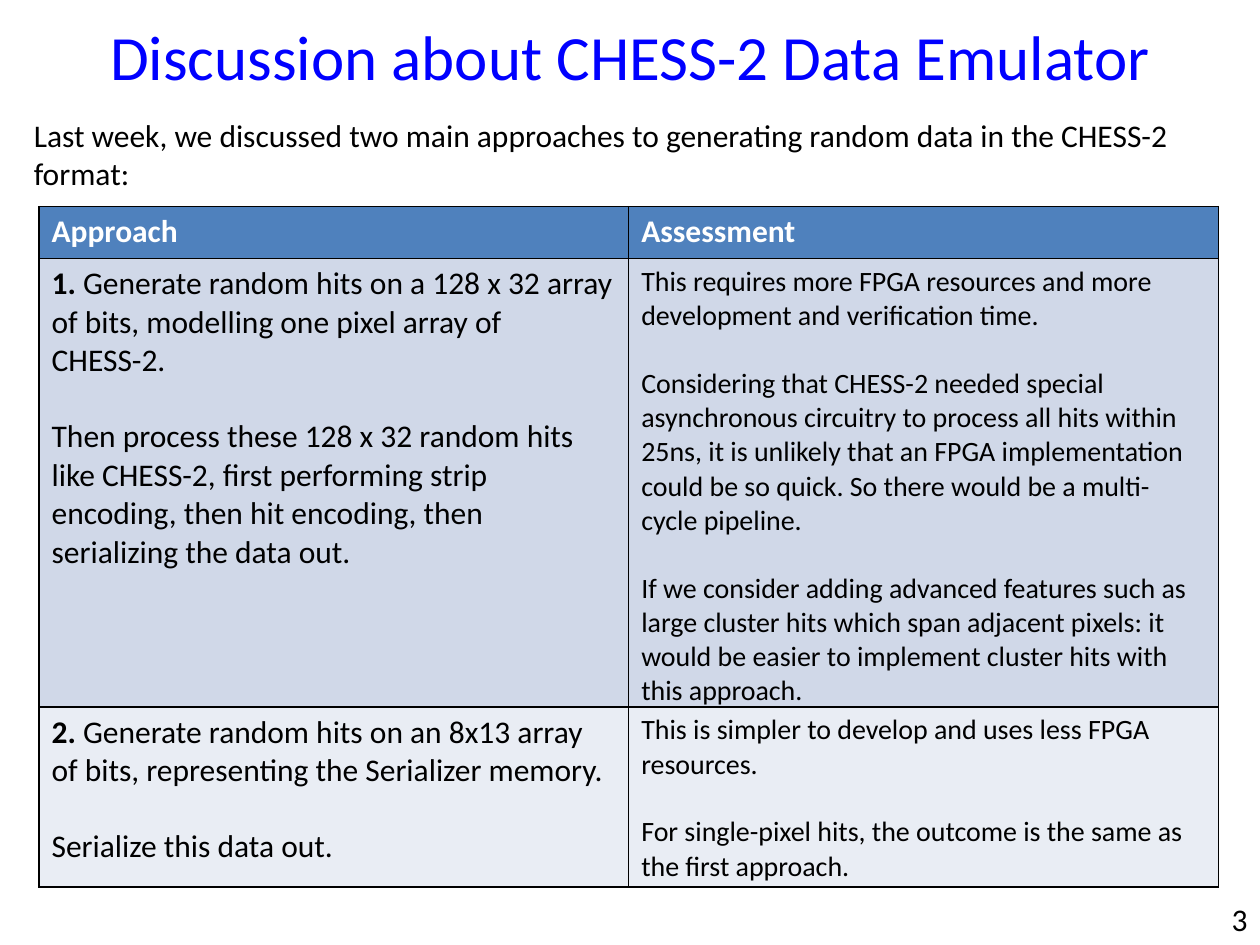
from lxml.etree import SubElement
from pptx import Presentation
from pptx.dml.color import RGBColor
from pptx.enum.text import MSO_ANCHOR as Anchor, PP_ALIGN as Align
from pptx.oxml.ns import qn
from pptx.util import Inches, Pt

FONT = "Calibri"
COLORS = {
    "title": "0000FF",
    "text": "000000",
    "header_text": "FFFFFF",
    "header": "4F81BD",
    "odd_row": "D0D8E8",
    "even_row": "E9EDF4",
    "border": "000000",
}
LINE_HEIGHT = 1.2

# A cell is a list of paragraphs; a paragraph is text or (bold lead, text).
HEADINGS = ["Approach", "Assessment"]
APPROACHES = [
    (
        [
            ("1. ", "Generate random hits on a 128 x 32 array of bits, "
                    "modelling one pixel array of \nCHESS-2."),
            "Then process these 128 x 32 random hits like CHESS-2, first performing "
            "strip encoding, then hit encoding, then serializing the data out.",
        ],
        [
            "This requires more FPGA resources and more development and "
            "verification time.",
            "Considering that CHESS-2 needed special asynchronous circuitry to process "
            "all hits within 25ns, it is unlikely that an FPGA implementation could be "
            "so quick. So there would be a multi-cycle pipeline.",
            "If we consider adding advanced features such as large cluster hits which "
            "span adjacent pixels: it would be easier to implement cluster hits with "
            "this approach.",
        ],
    ),
    (
        [
            ("2. ", "Generate random hits on an 8x13 array of bits, "
                    "representing the Serializer memory."),
            "Serialize this data out.",
        ],
        [
            "This is simpler to develop and uses less FPGA resources.",
            "For single-pixel hits, the outcome is the same as the first approach.",
        ],
    ),
]


def add_span(para, text, size, color, bold):
    for index, line in enumerate(text.split("\n")):
        if index:
            para.add_line_break()
        span = para.add_run()
        span.text = line
        span.font.name = FONT
        span.font.size = Pt(size)
        span.font.bold = bold
        span.font.color.rgb = RGBColor.from_string(COLORS[color])


def write(frame, paragraphs, size=18, color="text", bold=False, align=Align.LEFT):
    """Fill a text frame, leaving one line's height between paragraphs."""
    frame.word_wrap = True
    for index, content in enumerate(paragraphs):
        para = frame.add_paragraph() if index else frame.paragraphs[0]
        para.alignment = align
        para.space_before = Pt(size * LINE_HEIGHT if index else 0)
        lead, text = content if isinstance(content, tuple) else ("", content)
        if lead:
            add_span(para, lead, size, color, True)
        add_span(para, text, size, color, bold)


def add_text(page, text, left, top, width, height, anchor=Anchor.TOP, **style):
    box = page.shapes.add_textbox(
        Inches(left), Inches(top), Inches(width), Inches(height))
    box.text_frame.vertical_anchor = anchor
    write(box.text_frame, [text], **style)


def set_title(page, text):
    title = page.shapes.title
    title.left, title.top = Inches(0.5), Inches(0.13)
    title.width, title.height = Inches(9), Inches(0.62)
    title.text_frame.vertical_anchor = Anchor.MIDDLE
    write(title.text_frame, [text], size=36, color="title", align=Align.CENTER)


def set_borders(cell, width=1):
    properties = cell._tc.get_or_add_tcPr()
    for position, side in enumerate(("lnL", "lnR", "lnT", "lnB")):
        line = SubElement(properties, qn(f"a:{side}"), w=str(Pt(width)))
        fill = SubElement(line, qn("a:solidFill"))
        SubElement(fill, qn("a:srgbClr"), val=COLORS["border"])
        properties.insert(position, line)


def fill_cell(cell, paragraphs, fill, **style):
    cell.fill.solid()
    cell.fill.fore_color.rgb = RGBColor.from_string(COLORS[fill])
    cell.margin_bottom = 0
    set_borders(cell)
    write(cell.text_frame, paragraphs, **style)


def add_approach_table(page):
    row_heights = [0.41, 3.56, 1.43]
    table = page.shapes.add_table(
        len(row_heights), len(HEADINGS), Inches(0.31), Inches(1.64),
        Inches(9.36), Inches(sum(row_heights))).table
    for row, height in zip(table.rows, row_heights):
        row.height = Inches(height)
    for column, heading in enumerate(HEADINGS):
        fill_cell(table.cell(0, column), [heading], "header",
                  color="header_text", bold=True)
    for row, (approach, assessment) in enumerate(APPROACHES, start=1):
        fill = "odd_row" if row % 2 else "even_row"
        fill_cell(table.cell(row, 0), approach, fill)
        fill_cell(table.cell(row, 1), assessment, fill, size=16)


def main():
    deck = Presentation()
    deck.slide_width, deck.slide_height = Inches(10), Inches(7.5)
    page = deck.slides.add_slide(deck.slide_layouts.get_by_name("Title Only"))
    set_title(page, "Discussion about CHESS-2 Data Emulator")
    add_text(page, "Last week, we discussed two main approaches to generating random "
                   "data in the CHESS-2 format:", 0.17, 0.87, 9.62, 0.71)
    add_approach_table(page)
    add_text(page, "3", 9.25, 7.09, 0.75, 0.4, anchor=Anchor.MIDDLE, align=Align.RIGHT)
    deck.save("out.pptx")


if __name__ == "__main__":
    main()
